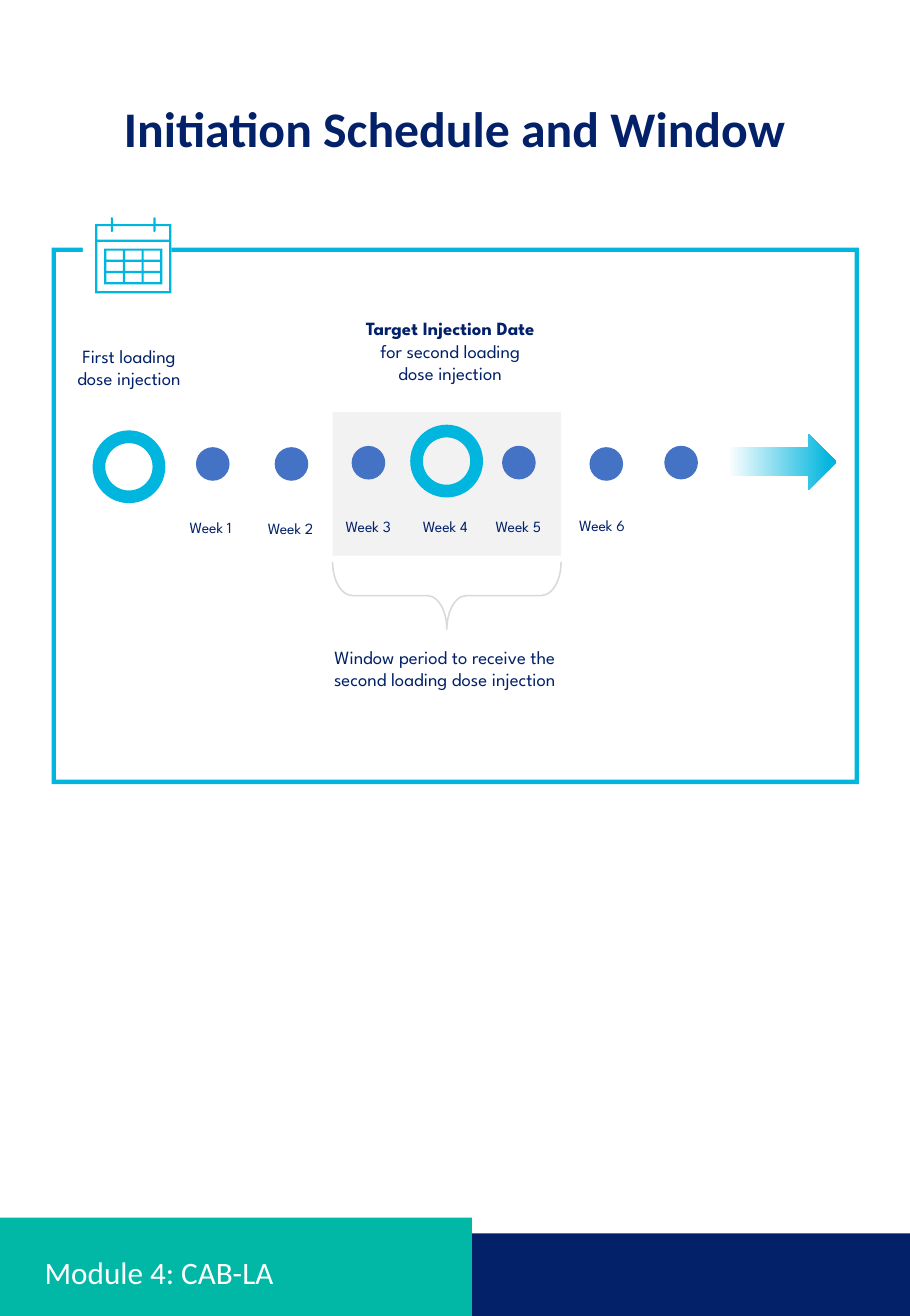
from pptx import Presentation
from pptx import util as u
from pptx.dml import color
from pptx.enum import shapes, text

Pt = u.Pt
KIND = shapes.MSO_SHAPE
WIDE, HIGH, SPLIT = 585, 846, 303.4
NAVY, TEAL, CYAN, BLUE = "022169", "00B8A5", "00B5DE", "4472C4"
WHITE, PALE, GREY = "FFFFFF", "F2F2F2", "D9D9D9"
BODY = "League Spartan"
DOT, RING = 21.6, 46.8

# Weekly dots: centre x, top
DOTS = [(136.8, 287.5), (187.4, 287.5), (236.9, 286.7),
        (333.6, 286.6), (389.8, 287.5), (437.9, 286.6)]
# Week labels: centre x, top
WEEKS = [(135.4, 329.5), (186.8, 329.8), (236.7, 328.9),
         (286.2, 328.6), (333.2, 328.6), (387, 328.2)]


def rgb(code):
    return color.RGBColor.from_string(code)


def paint(shape, fill):
    shape.shadow.inherit = False
    shape.line.fill.background()
    shape.fill.solid()
    shape.fill.fore_color.rgb = rgb(fill)


def block(slide, kind, box, fill, adj=None):
    shape = slide.shapes.add_shape(kind, *map(Pt, box))
    paint(shape, fill)
    if adj is not None:
        shape.adjustments[0] = adj
    return shape


def label(slide, box, runs, size=12, font=BODY, ink=NAVY, center=True,
          gap=None, middle=False):
    """Add one paragraph; runs holds (words, bold) pairs."""
    frame = slide.shapes.add_textbox(*map(Pt, box)).text_frame
    frame.word_wrap = True
    if middle:
        frame.vertical_anchor = text.MSO_ANCHOR.MIDDLE
    para = frame.paragraphs[0]
    para.alignment = text.PP_ALIGN.CENTER if center else text.PP_ALIGN.LEFT
    if gap:
        para.line_spacing = gap
    for words, bold in runs:
        run = para.add_run()
        run.text = words
        run.font.name, run.font.size = font, Pt(size)
        run.font.bold = bold
        run.font.color.rgb = rgb(ink)


def pierced(slide, box, holes, fill):
    """Draw a rectangle with rectangular holes cut out."""
    pen = None
    for x, y, w, h in [box] + holes:
        if pen is None:
            pen = slide.shapes.build_freeform(Pt(x), Pt(y))
        else:
            pen.move_to(Pt(x), Pt(y))
        ends = [(x + w, y), (x + w, y + h), (x, y + h)]
        pen.add_line_segments([(Pt(a), Pt(b)) for a, b in ends], close=True)
    paint(pen.convert_to_shape(), fill)


def calendar(slide):
    block(slide, KIND.RECTANGLE, (53.3, 133.2, 56.9, 61.9), WHITE)
    pierced(slide, (61.2, 144, 49, 44.6),
            [(62.6, 145.4, 46.2, 8.7), (62.6, 155.5, 46.2, 31.7)], CYAN)
    for x in (71.2, 98.6):
        block(slide, KIND.ROUNDED_RECTANGLE, (x, 139.7, 1.4, 9.4), CYAN, 0.5)
    cells = [(68.4 + 12 * col, 161.2 + 7.2 * row, 10.6, 5.8)
             for row in range(3) for col in range(3)]
    pierced(slide, (67, 159.8, 37.4, 23), cells, CYAN)


def arrow(slide, box):
    shape = block(slide, KIND.RIGHT_ARROW, box, CYAN)
    shape.fill.gradient()
    shape.fill.gradient_angle = 0
    stops = shape.fill.gradient_stops
    for stop, (place, code) in zip(stops, [(0.03, WHITE), (0.95, CYAN)]):
        stop.position = place
        stop.color.rgb = rgb(code)


def brace(slide, box):
    shape = block(slide, KIND.LEFT_BRACE, box, WHITE, 0.294)
    shape.fill.background()
    shape.line.color.rgb = rgb(GREY)
    shape.line.width = Pt(1)
    shape.rotation = 270


def timeline(slide):
    block(slide, KIND.RECTANGLE, (213.9, 265, 146.9, 92.2), PALE)
    for x, y in [(59.5, 276.7), (263.7, 273)]:
        block(slide, KIND.DONUT, (x, y, RING, RING), CYAN, 0.175)
    for x, y in DOTS:
        block(slide, KIND.OVAL, (x - DOT / 2, y, DOT, DOT), BLUE)
    for num, (x, y) in enumerate(WEEKS, 1):
        label(slide, (x - 27, y, 54, 19.4), [(f"Week {num}", False)], 10)
    arrow(slide, (465.8, 278.8, 72, 36))
    brace(slide, (265.7, 309.4, 43.2, 146.9))


def notes(slide):
    label(slide, (38.7, 217.9, 88.6, 51.1),
          [("First loading dose injection", False)])
    label(slide, (226.1, 200.2, 126.7, 79.9),
          [("Target Injection Date ", True),
           ("for second loading dose injection", False)])
    label(slide, (203.9, 411.5, 164.2, 51.1),
          [("Window period to receive the second loading dose injection",
            False)])


def main():
    deck = Presentation()
    deck.slide_width, deck.slide_height = Pt(WIDE), Pt(HIGH)
    slide = deck.slides.add_slide(deck.slide_layouts[6])

    # Footer bars
    block(slide, KIND.RECTANGLE, (SPLIT, 792.9, WIDE - SPLIT, 53.1), NAVY)
    block(slide, KIND.RECTANGLE, (0, 782.8, SPLIT, 63.2), TEAL)

    # Title
    label(slide, (44.1, 63.4, 496.8, 58.3),
          [("Initiation Schedule and Window", True)], 32, "Calibri", gap=0.9)

    # Framed schedule
    block(slide, KIND.FRAME, (33.1, 159.1, 519.1, 344.9), CYAN, 0.008)
    calendar(slide)
    timeline(slide)
    notes(slide)

    # Module name
    label(slide, (21.6, 801.4, 258.5, 36), [("Module 4: CAB-LA", False)],
          20, "Calibri", WHITE, center=False, gap=0.9, middle=True)

    deck.save("out.pptx")


if __name__ == "__main__":
    main()
